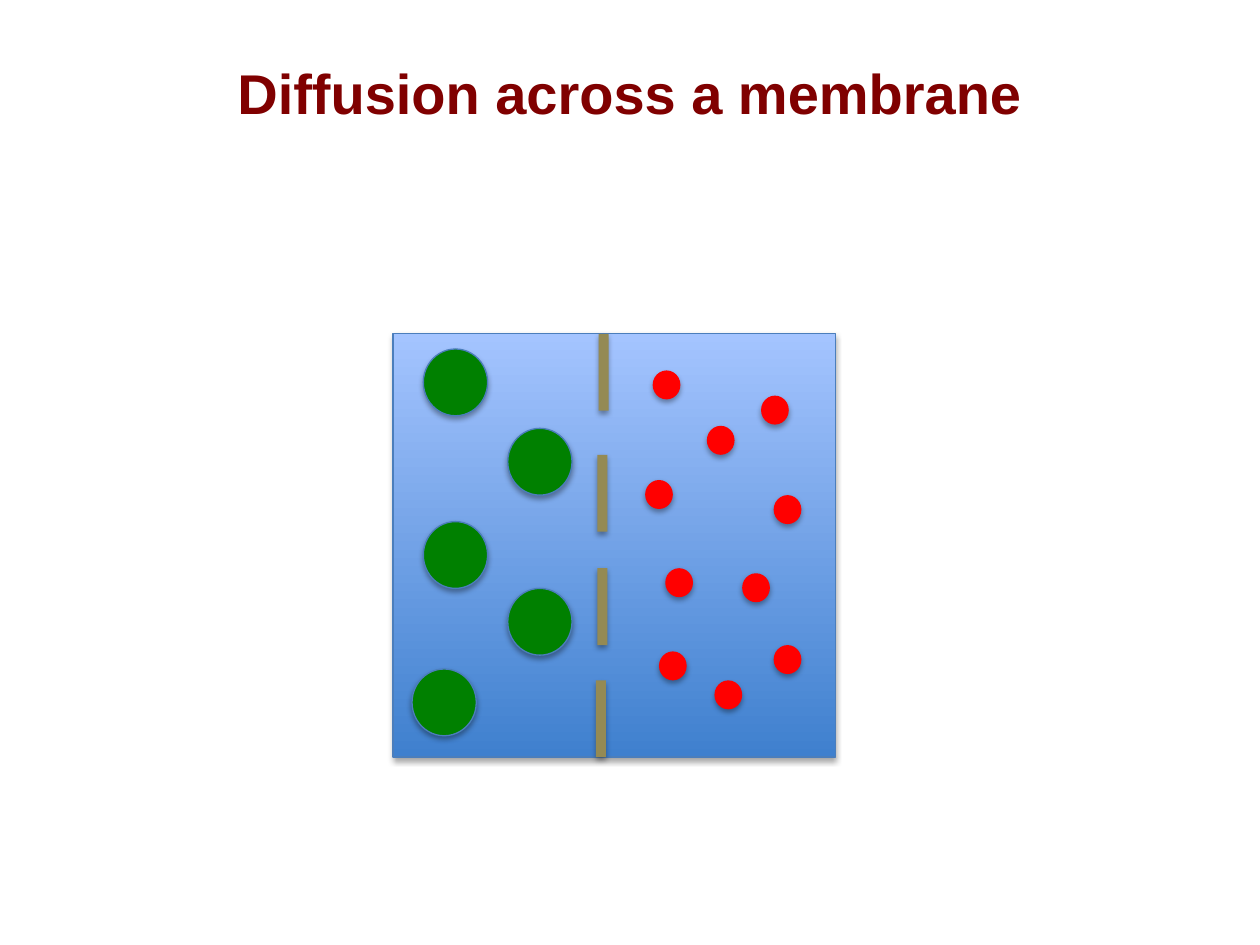
from lxml.etree import SubElement
from pptx import Presentation
from pptx.dml.color import RGBColor
from pptx.enum.shapes import MSO_SHAPE
from pptx.enum.text import MSO_ANCHOR, PP_ALIGN
from pptx.oxml.ns import qn
from pptx.util import Inches, Pt

MAROON = RGBColor(0x80, 0x00, 0x00)
OUTLINE_BLUE = RGBColor(0x4B, 0x7E, 0xBC)
DEEP_BLUE = RGBColor(0x3F, 0x80, 0xCE)
PALE_BLUE = RGBColor(0xA4, 0xC4, 0xFF)
MEMBRANE_TAN = RGBColor(0x94, 0x8A, 0x54)
RED = RGBColor(0xFF, 0x00, 0x00)
GREEN = RGBColor(0x00, 0x80, 0x00)

MEMBRANE_SEGMENTS = [(1.61, 2.75), (1.62, 1.86), (1.62, 0.96), (1.63, 0)]
SMALL_MOLECULES = [
    (2.06, 0.29), (3.02, 2.47), (2.49, 0.73), (2.92, 0.49), (2.16, 1.86),
    (2.77, 1.90), (2.11, 2.52), (2.00, 1.16), (3.02, 1.28), (2.55, 2.75),
]
LARGE_MOLECULES = [(0.91, 0.75), (0.24, 1.49), (0.91, 2.02), (0.15, 2.66), (0.24, 0.12)]


def add_shadow(shape):
    shape.shadow.inherit = False
    effects = shape._element.spPr.find(qn("a:effectLst"))
    shadow = SubElement(
        effects, qn("a:outerShdw"), blurRad=str(Pt(3.1)), dist=str(Pt(1.8)),
        dir="5400000", rotWithShape="0",
    )
    color = SubElement(shadow, qn("a:srgbClr"), val="000000")
    SubElement(color, qn("a:alpha"), val="35000")


def add_part(slide, kind, left, top, width, height, fill=None, outline=None):
    shape = slide.shapes.add_shape(
        kind, Inches(left), Inches(top), Inches(width), Inches(height)
    )
    if fill is not None:
        shape.fill.solid()
        shape.fill.fore_color.rgb = fill
    if outline is None:
        shape.line.fill.background()
    else:
        shape.line.color.rgb = outline
        shape.line.width = Pt(0.75)
    add_shadow(shape)
    return shape


def add_title(slide, left, top, width, height):
    title = slide.shapes.title
    title.left, title.top = Inches(left), Inches(top)
    title.width, title.height = Inches(width), Inches(height)
    title.text_frame.text = "Diffusion across a membrane"
    title.text_frame.vertical_anchor = MSO_ANCHOR.MIDDLE
    paragraph = title.text_frame.paragraphs[0]
    paragraph.alignment = PP_ALIGN.CENTER
    font = paragraph.runs[0].font
    font.name = "Arial"
    font.size = Pt(32)
    font.bold = True
    font.color.rgb = MAROON


def add_container(slide, left, top, width, height):
    water = add_part(
        slide, MSO_SHAPE.RECTANGLE, left, top, width, height, outline=OUTLINE_BLUE
    )
    water.fill.gradient()
    water.fill.gradient_angle = 90
    for stop, color, position in zip(
        water.fill.gradient_stops, (DEEP_BLUE, PALE_BLUE), (0, 1)
    ):
        stop.color.rgb = color
        stop.position = position

    groups = [
        (MSO_SHAPE.RECTANGLE, MEMBRANE_SEGMENTS, (0.08, 0.61), MEMBRANE_TAN, None),
        (MSO_SHAPE.OVAL, SMALL_MOLECULES, (0.22, 0.23), RED, None),
        (MSO_SHAPE.OVAL, LARGE_MOLECULES, (0.51, 0.53), GREEN, OUTLINE_BLUE),
    ]
    for kind, offsets, size, fill, outline in groups:
        for x, y in offsets:
            add_part(slide, kind, left + x, top + y, *size, fill, outline)


def main():
    presentation = Presentation()
    presentation.slide_width = Inches(10)
    presentation.slide_height = Inches(7.5)
    slide = presentation.slides.add_slide(presentation.slide_layouts[5])
    add_title(slide, 0, 0.3, 10, 0.86)
    add_container(slide, 3.12, 2.65, 3.51, 3.36)
    presentation.save("out.pptx")


if __name__ == "__main__":
    main()
